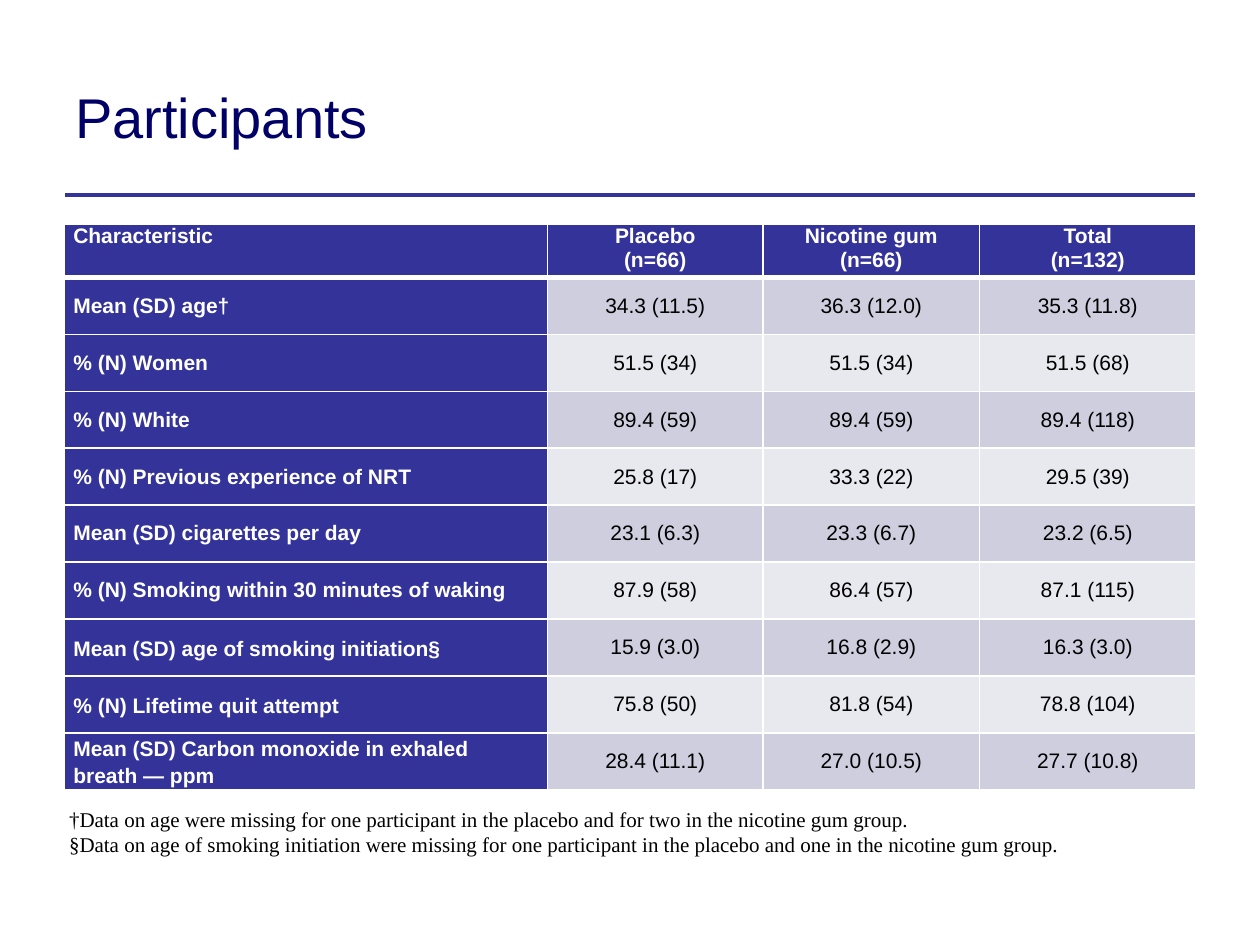
import pptx
import pptx.util
import pptx.dml.color
import pptx.enum.shapes
import pptx.enum.text
import pptx.oxml.ns
import lxml.etree

Pt = pptx.util.Pt
ALIGN = pptx.enum.text.PP_ALIGN
ANCHOR = pptx.enum.text.MSO_ANCHOR
COLORS = {
    "title": "000066", "accent": "333399", "white": "FFFFFF", "black": "000000",
    "band_dark": "CECEDE", "band_light": "E8E8EF",
}
HEADERS = ["Characteristic", "Placebo\n(n=66)", "Nicotine gum\n(n=66)", "Total\n(n=132)"]
ROWS = [
    ["Mean (SD) age†", "34.3 (11.5)", "36.3 (12.0)", "35.3 (11.8)"],
    ["% (N) Women", "51.5 (34)", "51.5 (34)", "51.5 (68)"],
    ["% (N) White", "89.4 (59)", "89.4 (59)", "89.4 (118)"],
    ["% (N) Previous experience of NRT", "25.8 (17)", "33.3 (22)", "29.5 (39)"],
    ["Mean (SD) cigarettes per day", "23.1 (6.3)", "23.3 (6.7)", "23.2 (6.5)"],
    ["% (N) Smoking within 30 minutes of waking", "87.9 (58)", "86.4 (57)", "87.1 (115)"],
    ["Mean (SD) age of smoking initiation§", "15.9 (3.0)", "16.8 (2.9)", "16.3 (3.0)"],
    ["% (N) Lifetime quit attempt", "75.8 (50)", "81.8 (54)", "78.8 (104)"],
    ["Mean (SD) Carbon monoxide in exhaled breath — ppm",
     "28.4 (11.1)", "27.0 (10.5)", "27.7 (10.8)"],
]
FOOTNOTES = (
    "†Data on age were missing for one participant in the placebo"
    " and for two in the nicotine gum group.\n"
    "§Data on age of smoking initiation were missing for one participant"
    " in the placebo and one in the nicotine gum group."
)
COLUMN_WIDTHS = [275.9, 123.3, 123.7, 123.7]
HEADER_HEIGHT, ROW_HEIGHT = 30.2, 32.56
LOOSE_ROWS = 7  # from this row on, labels have fixed line spacing


def rgb(name):
    return pptx.dml.color.RGBColor.from_string(COLORS[name])


class SlideBuilder:
    def __init__(self, slide, font="Arial", size=12):
        self.slide, self.font, self.size = slide, font, size

    def fill_text(self, frame, text, color, size=None, font=None, bold=False,
                  align=ALIGN.LEFT, spacing=None):
        frame.text = text
        for paragraph in frame.paragraphs:
            paragraph.alignment = align
            if spacing:
                paragraph.line_spacing = Pt(spacing)
            paragraph.font.name = font or self.font
            paragraph.font.size = Pt(size or self.size)
            paragraph.font.bold = bold
            paragraph.font.color.rgb = rgb(color)

    def text(self, left, top, width, height, text, color, **style):
        box = self.slide.shapes.add_textbox(Pt(left), Pt(top), Pt(width), Pt(height))
        box.text_frame.word_wrap = True
        box.text_frame.vertical_anchor = ANCHOR.MIDDLE
        self.fill_text(box.text_frame, text, color, **style)

    def rule(self, left, right, y, color, width):
        line = self.slide.shapes.add_connector(
            pptx.enum.shapes.MSO_CONNECTOR.STRAIGHT, Pt(left), Pt(y), Pt(right), Pt(y))
        line.line.color.rgb = rgb(color)
        line.line.width = Pt(width)
        lxml.etree.SubElement(line._element.spPr, pptx.oxml.ns.qn("a:effectLst"))

    def borders(self, cell, **widths):
        properties = cell._tc.get_or_add_tcPr()
        for side in "LRTB":
            line = lxml.etree.SubElement(
                properties, pptx.oxml.ns.qn(f"a:ln{side}"), w=str(Pt(widths.get(side, 1))))
            fill = lxml.etree.SubElement(line, pptx.oxml.ns.qn("a:solidFill"))
            lxml.etree.SubElement(fill, pptx.oxml.ns.qn("a:srgbClr"), val=COLORS["white"])

    def table(self, left, top, rows):
        height = HEADER_HEIGHT + ROW_HEIGHT * (len(rows) - 1)
        table = self.slide.shapes.add_table(
            len(rows), len(COLUMN_WIDTHS), Pt(left), Pt(top),
            Pt(sum(COLUMN_WIDTHS)), Pt(height)).table
        table.first_col = True
        for column, width in zip(table.columns, COLUMN_WIDTHS):
            column.width = Pt(width)
        for r, values in enumerate(rows):
            table.rows[r].height = Pt(ROW_HEIGHT if r else HEADER_HEIGHT)
            for c, value in enumerate(values):
                self.cell(table.cell(r, c), r, c, value)

    def cell(self, cell, row, column, value):
        heading = row == 0 or column == 0
        # Borders come before the fill in the cell properties
        self.borders(cell, T=3 if row == 1 else 1, B=3 if row == 0 else 1)
        cell.fill.solid()
        band = "band_dark" if row % 2 else "band_light"
        cell.fill.fore_color.rgb = rgb("accent" if heading else band)
        cell.margin_left = cell.margin_right = Pt(5)
        cell.margin_top = cell.margin_bottom = 0
        cell.vertical_anchor = ANCHOR.MIDDLE if row else ANCHOR.TOP
        self.fill_text(cell.text_frame, value, "white" if heading else "black", bold=heading,
                       align=ALIGN.CENTER if column else ALIGN.LEFT,
                       spacing=15 if column == 0 and row >= LOOSE_ROWS else None)


def main():
    presentation = pptx.Presentation()
    presentation.slide_width, presentation.slide_height = Pt(720), Pt(540)
    builder = SlideBuilder(presentation.slides.add_slide(presentation.slide_layouts[6]))

    # Title and rule
    builder.rule(36.9, 683.1, 111.3, "accent", 2.25)
    builder.text(36, 21.6, 684, 90, "Participants", "title", size=32)

    # Participant characteristics
    builder.table(36.9, 128.3, [HEADERS] + ROWS)

    # Footnotes
    builder.text(32.4, 457.2, 588.2, 36, FOOTNOTES, "black", font="Times New Roman")

    presentation.save("out.pptx")


if __name__ == "__main__":
    main()
